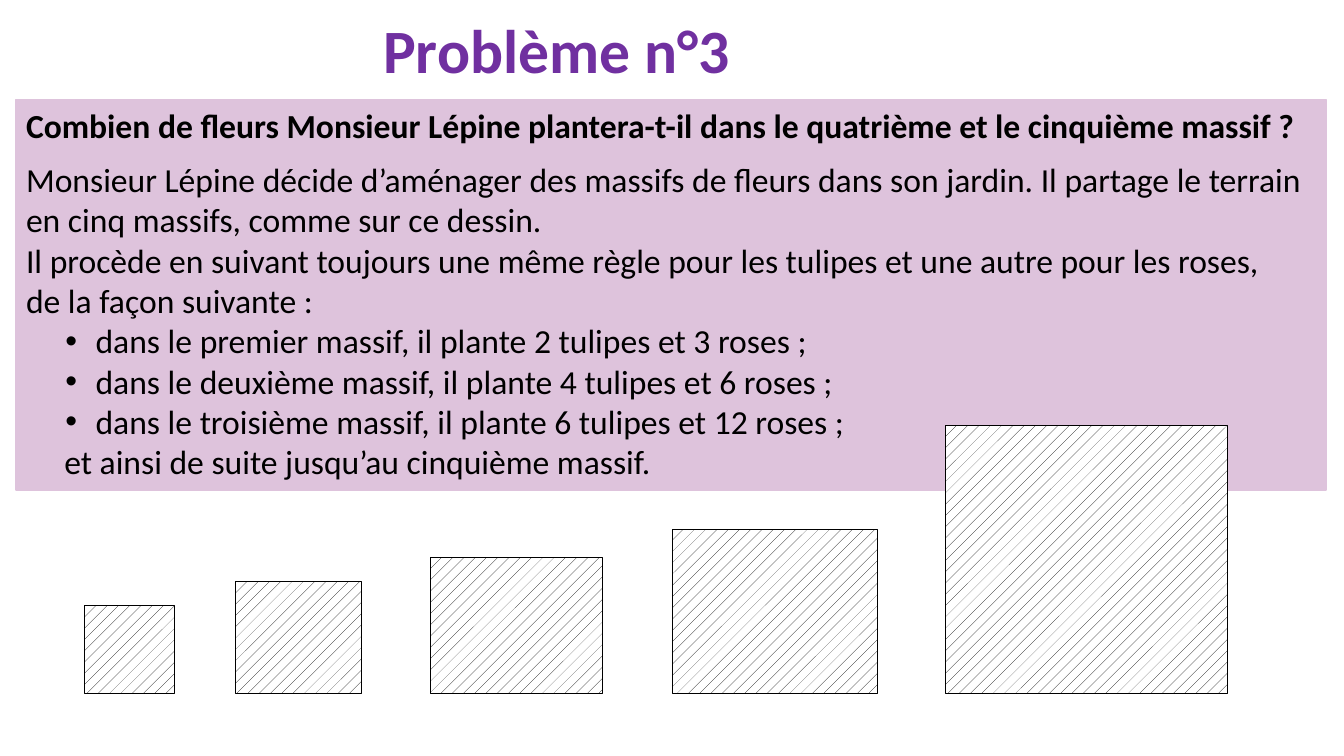
from dataclasses import dataclass

from lxml import etree
from pptx import Presentation
from pptx.dml.color import RGBColor
from pptx.enum.dml import MSO_PATTERN
from pptx.enum.shapes import MSO_SHAPE
from pptx.enum.text import MSO_ANCHOR, MSO_AUTO_SIZE, PP_ALIGN
from pptx.oxml.ns import qn
from pptx.util import Inches, Pt

RECTANGLE = MSO_SHAPE.RECTANGLE
DOTS = MSO_PATTERN.PERCENT_10
TOP = MSO_ANCHOR.TOP
LEFT = PP_ALIGN.LEFT
FIXED = MSO_AUTO_SIZE.NONE
GROW = MSO_AUTO_SIZE.SHAPE_TO_FIT_TEXT


@dataclass(frozen=True)
class Theme:
    font: str = "Calibri"
    title_size: int = 44
    body_size: int = 24
    purple: RGBColor = RGBColor(0x70, 0x30, 0xA0)
    lilac: RGBColor = RGBColor(0xDE, 0xC3, 0xDC)
    black: RGBColor = RGBColor(0, 0, 0)
    white: RGBColor = RGBColor(255, 255, 255)


THEME = Theme()
TITLE = "Problème n°3"
QUESTION = "Combien de fleurs Monsieur Lépine plantera-t-il dans le quatrième et le cinquième massif ?"
STORY = [
    "Monsieur Lépine décide d’aménager des massifs de fleurs dans son jardin. "
    "Il partage le terrain en cinq massifs, comme sur ce dessin.",
    "Il procède en suivant toujours une même règle pour les tulipes et une autre pour les roses,",
    "de la façon suivante :",
]
PLANTINGS = [("premier", 2, 3), ("deuxième", 4, 6), ("troisième", 6, 12)]
ENDING = "et ainsi de suite jusqu’au cinquième massif."
BASELINE = 6.88
FLOWER_BEDS = [
    (0.84, 0.89, 0.87),
    (2.34, 1.25, 1.11),
    (4.27, 1.71, 1.35),
    (6.67, 2.03, 1.63),
    (9.38, 2.79, 2.66),
]


def apply_format(target, values):
    for name, value in values.items():
        setattr(target, name, value)


def write_span(para, text, size, color, bold=False):
    span = para.add_run()
    span.text = text
    apply_format(span.font, {"name": THEME.font, "size": Pt(size), "bold": bold})
    span.font.color.rgb = color


def indent_para(para, margin, hanging=0, bullet=None):
    properties = para._p.get_or_add_pPr()
    properties.set("marL", str(Inches(margin)))
    properties.set("indent", str(Inches(-hanging)))
    if bullet:
        etree.SubElement(properties, qn("a:buFont")).set("typeface", "Arial")
        etree.SubElement(properties, qn("a:buChar")).set("char", bullet)


def add_rectangle(page, box, line_color, line_width):
    shape = page.shapes.add_shape(RECTANGLE, *map(Inches, box))
    shape.shadow.inherit = False
    shape.line.color.rgb = line_color
    shape.line.width = Pt(line_width)
    return shape


def place_title(page, box):
    title = page.shapes.title
    apply_format(title, dict(zip(("left", "top", "width", "height"), map(Inches, box))))
    frame = title.text_frame
    apply_format(frame, {"vertical_anchor": TOP, "auto_size": FIXED, "word_wrap": True})
    para = frame.paragraphs[0]
    apply_format(para, {"alignment": LEFT, "line_spacing": 0.9})
    write_span(para, TITLE, THEME.title_size, THEME.purple, True)


def place_statement(page, box):
    panel = add_rectangle(page, box, THEME.lilac, 1)
    panel.fill.solid()
    panel.fill.fore_color.rgb = THEME.lilac
    frame = panel.text_frame
    apply_format(frame, {"vertical_anchor": TOP, "auto_size": GROW, "word_wrap": True})

    def add_line(text, para=None, bold=False):
        para = para or frame.add_paragraph()
        para.alignment = LEFT
        write_span(para, text, THEME.body_size, THEME.black, bold)
        return para

    add_line(QUESTION, frame.paragraphs[0], True)
    story = [add_line(text) for text in STORY]
    story[0].space_before = Pt(10)
    for rank, tulips, roses in PLANTINGS:
        text = f"dans le {rank} massif, il plante {tulips} tulipes et {roses} roses ;"
        indent_para(add_line(text), 0.69, 0.3, "•")
    indent_para(add_line(ENDING), 0.38)


def place_flower_bed(page, left, width, height):
    bed = add_rectangle(page, (left, BASELINE - height, width, height), THEME.black, 0.75)
    bed.fill.patterned()
    bed.fill.pattern = DOTS
    bed.fill.fore_color.rgb = THEME.black
    bed.fill.back_color.rgb = THEME.white


def build_problem(deck):
    page = deck.slides.add_slide(deck.slide_layouts[5])
    place_title(page, (3.7, 0.15, 5.74, 1.45))
    for bed in FLOWER_BEDS[:-1]:
        place_flower_bed(page, *bed)
    place_statement(page, (0.16, 0.99, 12.99, 3.87))
    place_flower_bed(page, *FLOWER_BEDS[-1])


def main():
    deck = Presentation()
    deck.slide_width, deck.slide_height = Inches(13.33), Inches(7.5)
    build_problem(deck)
    deck.save("out.pptx")


if __name__ == "__main__":
    main()
